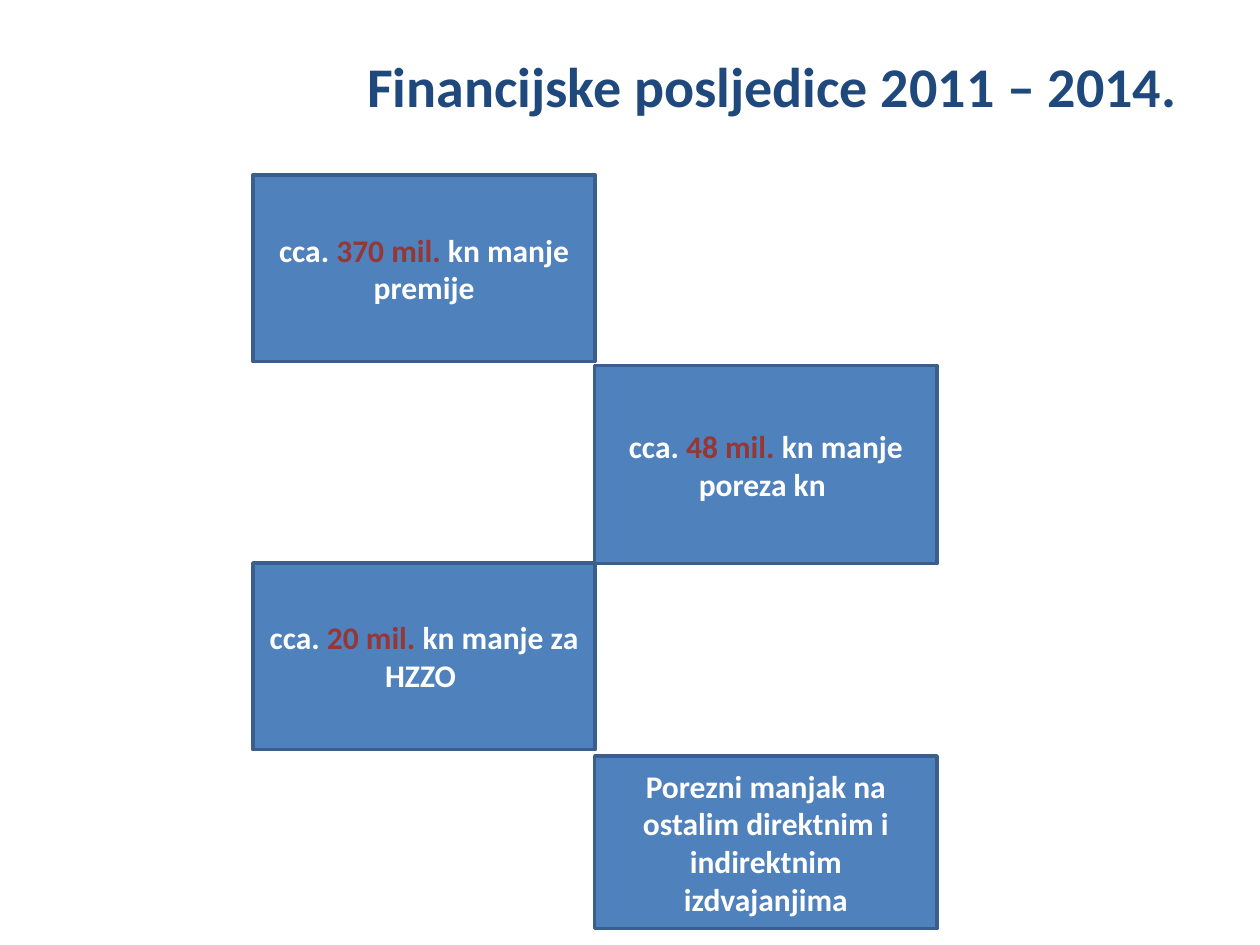
from pptx import Presentation
from pptx.dml.color import RGBColor
from pptx.enum.shapes import MSO_SHAPE
from pptx.enum.text import MSO_ANCHOR, PP_ALIGN
from pptx.util import Cm, Pt

NAVY = RGBColor(0x1F, 0x49, 0x7D)
BLUE = RGBColor(0x4F, 0x81, 0xBD)
EDGE = RGBColor(0x3A, 0x5F, 0x8C)
WHITE = RGBColor(0xFF, 0xFF, 0xFF)
RED = RGBColor(0x95, 0x37, 0x35)

TITLE = "Financijske posljedice 2011 – 2014. "
BOXES = [
    (3.53, 3.76, [("cca. ", WHITE), ("370 mil. ", RED), ("kn manje premije", WHITE)]),
    (7.37, 3.99, [("cca. ", WHITE), ("48 mil. ", RED), ("kn manje poreza kn ", WHITE)]),
    (11.35, 3.76, [("cca. ", WHITE), ("20 mil. ", RED), ("kn manje za HZZO ", WHITE)]),
    (15.24, 3.48, [("Porezni manjak na ostalim direktnim i indirektnim izdvajanjima", WHITE)]),
]
COLUMNS = (5.1, 11.99)
BOX_WIDTH = 6.9


def style(p, size):
    p.alignment = PP_ALIGN.CENTER
    p.font.name = "Calibri"
    p.font.size = Pt(size)
    p.font.bold = True


prs = Presentation()
prs.slide_width, prs.slide_height = Cm(25.4), Cm(19.05)
s = prs.slides.add_slide(prs.slide_layouts[5])

title = s.shapes.title
title.left, title.top, title.width, title.height = Cm(6.17), Cm(0.13), Cm(19.05), Cm(3.18)
tf = title.text_frame
tf.text = TITLE
tf.vertical_anchor = MSO_ANCHOR.MIDDLE
style(tf.paragraphs[0], 32)
tf.paragraphs[0].font.color.rgb = NAVY

for i, (top, height, runs) in enumerate(BOXES):
    sp = s.shapes.add_shape(MSO_SHAPE.RECTANGLE, Cm(COLUMNS[i % 2]), Cm(top),
                            Cm(BOX_WIDTH), Cm(height))
    sp.shadow.inherit = False
    sp.fill.solid()
    sp.fill.fore_color.rgb = BLUE
    sp.line.color.rgb = EDGE
    sp.line.width = Pt(2)
    tf = sp.text_frame
    tf.word_wrap = True
    tf.vertical_anchor = MSO_ANCHOR.MIDDLE
    p = tf.paragraphs[0]
    style(p, 18)
    for text, color in runs:
        r = p.add_run()
        r.text = text
        r.font.color.rgb = color

prs.save("out.pptx")
